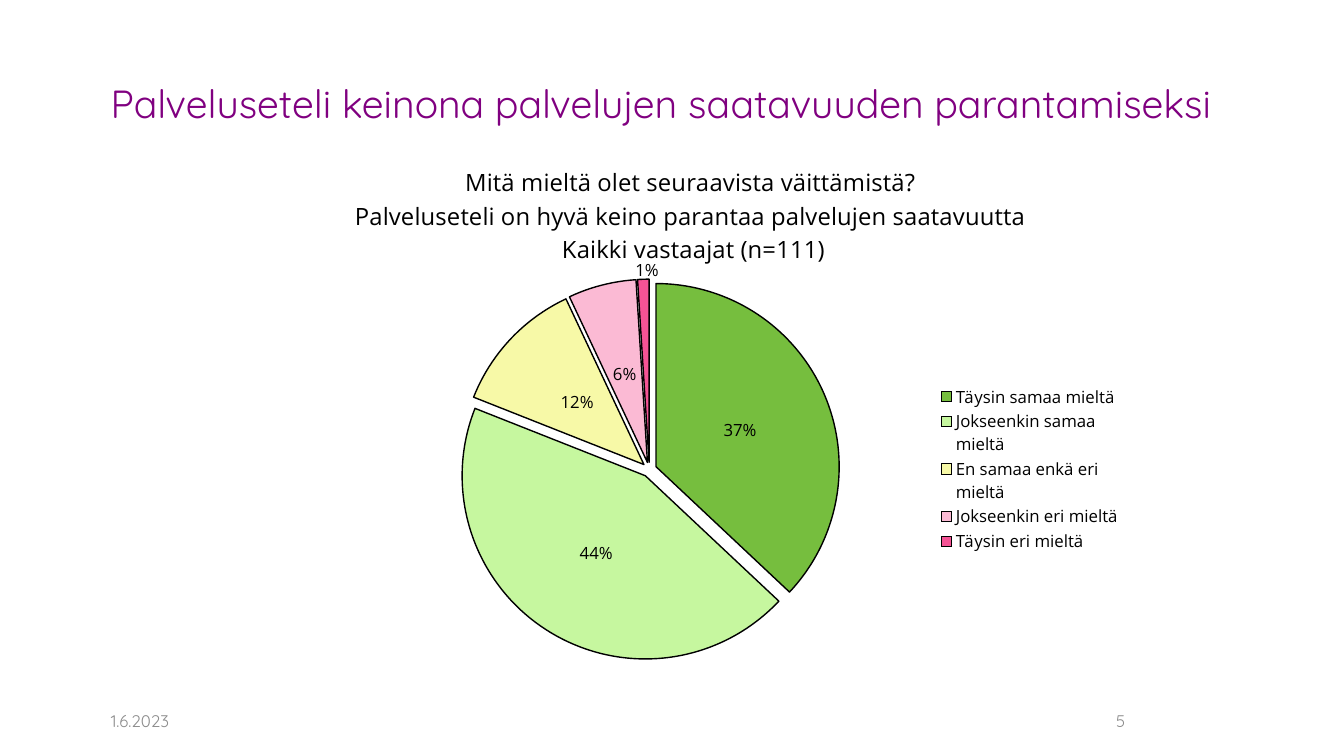
from lxml.etree import SubElement
from pptx import Presentation
from pptx.chart.data import CategoryChartData
from pptx.dml.color import RGBColor
from pptx.enum.chart import XL_CHART_TYPE, XL_LABEL_POSITION, XL_LEGEND_POSITION
from pptx.enum.text import MSO_ANCHOR, PP_ALIGN
from pptx.oxml import parse_xml
from pptx.oxml.ns import nsdecls, qn
from pptx.util import Inches, Pt

TITLE = "Palveluseteli keinona palvelujen saatavuuden parantamiseksi"
QUESTION = [
    "Mitä mieltä olet seuraavista väittämistä? ",
    "Palveluseteli on hyvä keino parantaa palvelujen saatavuutta ",
    "Kaikki vastaajat (n=111)",
]
ANSWERS = [
    ("Täysin samaa mieltä", 0.37, "54AE0E"),
    ("Jokseenkin samaa mieltä", 0.44, "B8F588"),
    ("En samaa enkä eri mieltä", 0.12, "F6F892"),
    ("Jokseenkin eri mieltä", 0.06, "FAA9CA"),
    ("Täysin eri mieltä", 0.01, "F3297B"),
]
CHART_BOX = (1, 1.51, 11.67, 5.23)


def rgb(value):
    return RGBColor.from_string(value)


def apply(target, values):
    for name, value in values.items():
        setattr(target, name, value)


def hidden(tag, index):
    return parse_xml(f'<c:{tag} {nsdecls("c")}><c:idx val="{index}"/>'
                     f'<c:delete val="1"/></c:{tag}>')


def place(element, index, lengths, **modes):
    for old in element.findall(qn("c:layout")):
        element.remove(old)
    layout = parse_xml(f"<c:layout {nsdecls('c')}/>")
    manual = SubElement(layout, qn("c:manualLayout"))
    fractions = {name: length / CHART_BOX[2 if name in "xw" else 3]
                 for name, length in zip("xywh", lengths)}
    for name, value in {**modes, **fractions}.items():
        SubElement(manual, qn(f"c:{name}")).set("val", str(value))
    element.insert(index, layout)


class SlideBuilder:
    heading_font = "Quicksand"
    chart_font = "Open Sans"
    edges = {"xMode": "edge", "yMode": "edge"}

    def __init__(self, prs):
        self.s = prs.slides.add_slide(prs.slide_layouts[6])

    def font(self, font, name, size, color):
        apply(font, {"name": name, "size": Pt(size), "bold": False})
        font.color.rgb = rgb(color)

    def text(self, text, box, size, color, anchor=MSO_ANCHOR.MIDDLE, **format):
        tf = self.s.shapes.add_textbox(*map(Inches, box)).text_frame
        apply(tf, {"word_wrap": True, "vertical_anchor": anchor})
        p = tf.paragraphs[0]
        apply(p, format)
        r = p.add_run()
        r.text = text
        self.font(r.font, self.heading_font, size, color)

    def pie(self, title, answers):
        data = CategoryChartData(number_format="0%")
        data.categories = [name for name, _, _ in answers] + [""]
        data.add_series("Series 1", [share for _, share, _ in answers] + [0])
        chart = self.s.shapes.add_chart(
            XL_CHART_TYPE.PIE, *map(Inches, CHART_BOX), data).chart
        self.font(chart.font, self.chart_font, 12, "000000")
        self.chart_title(chart, title)
        self.legend(chart, len(answers))
        self.slices(chart.plots[0].series[0], answers)
        plot_area = chart.element.find(".//" + qn("c:plotArea"))
        place(plot_area, 0, (3.55, 1.26, 3.78, 3.78), layoutTarget="inner", **self.edges)

    def chart_title(self, chart, lines):
        chart.has_title = True
        tf = chart.chart_title.text_frame
        for i, line in enumerate(lines):
            p = tf.add_paragraph() if i else tf.paragraphs[0]
            r = p.add_run()
            r.text = line
            self.font(r.font, self.chart_font, 17, "000000")
        place(chart.chart_title._element, 1, (2.49, 0.08), **self.edges)

    def legend(self, chart, blank):
        chart.has_legend = True
        legend = chart.legend
        apply(legend, {"position": XL_LEGEND_POSITION.RIGHT, "include_in_layout": False})
        self.font(legend.font, self.chart_font, 12, "000000")
        legend._element.insert(1, hidden("legendEntry", blank))
        place(legend._element, 2, (8.28, 2.3, 1.87, 1.69), **self.edges)

    def slices(self, series, answers):
        for i, (_, _, color) in enumerate(answers):
            format = series.points[i].format
            format.fill.solid()
            format.fill.fore_color.rgb = rgb(color)
            fill = format.fill._xPr.find(".//" + qn("a:srgbClr"))
            SubElement(fill, qn("a:alpha")).set("val", "80000")
            format.line.color.rgb = rgb("000000")
            format.line.width = Pt(1)
        explosion = parse_xml(f'<c:explosion {nsdecls("c")} val="4"/>')
        series._element.find(qn("c:dPt")).addprevious(explosion)
        labels = series.data_labels
        apply(labels, {
            "show_value": True,
            "number_format": "0%",
            "number_format_is_linked": False,
            "position": XL_LABEL_POSITION.CENTER,
        })
        self.font(labels.font, self.chart_font, 12, "000000")
        smallest = series.points[len(answers) - 1].data_label
        self.font(smallest.font, self.chart_font, 12, "000000")
        smallest.position = XL_LABEL_POSITION.OUTSIDE_END
        label = labels._element.find(qn("c:dLbl"))
        place(label, 1, (0.04, 0.08))
        label.addnext(hidden("dLbl", len(answers)))


def main():
    prs = Presentation()
    apply(prs, {"slide_width": Inches(13.33), "slide_height": Inches(7.5)})
    slide = SlideBuilder(prs)
    slide.text(TITLE, (1, 0.23, 11.67, 1.08), 28, "800080",
               MSO_ANCHOR.BOTTOM, line_spacing=0.9)
    slide.pie(QUESTION, ANSWERS)
    slide.text("1.6.2023", (1, 6.95, 2.78, 0.4), 12, "8C8C8C")
    slide.text("5", (9.56, 6.95, 3.11, 0.4), 12, "8C8C8C", alignment=PP_ALIGN.CENTER)
    prs.save("out.pptx")


if __name__ == "__main__":
    main()
